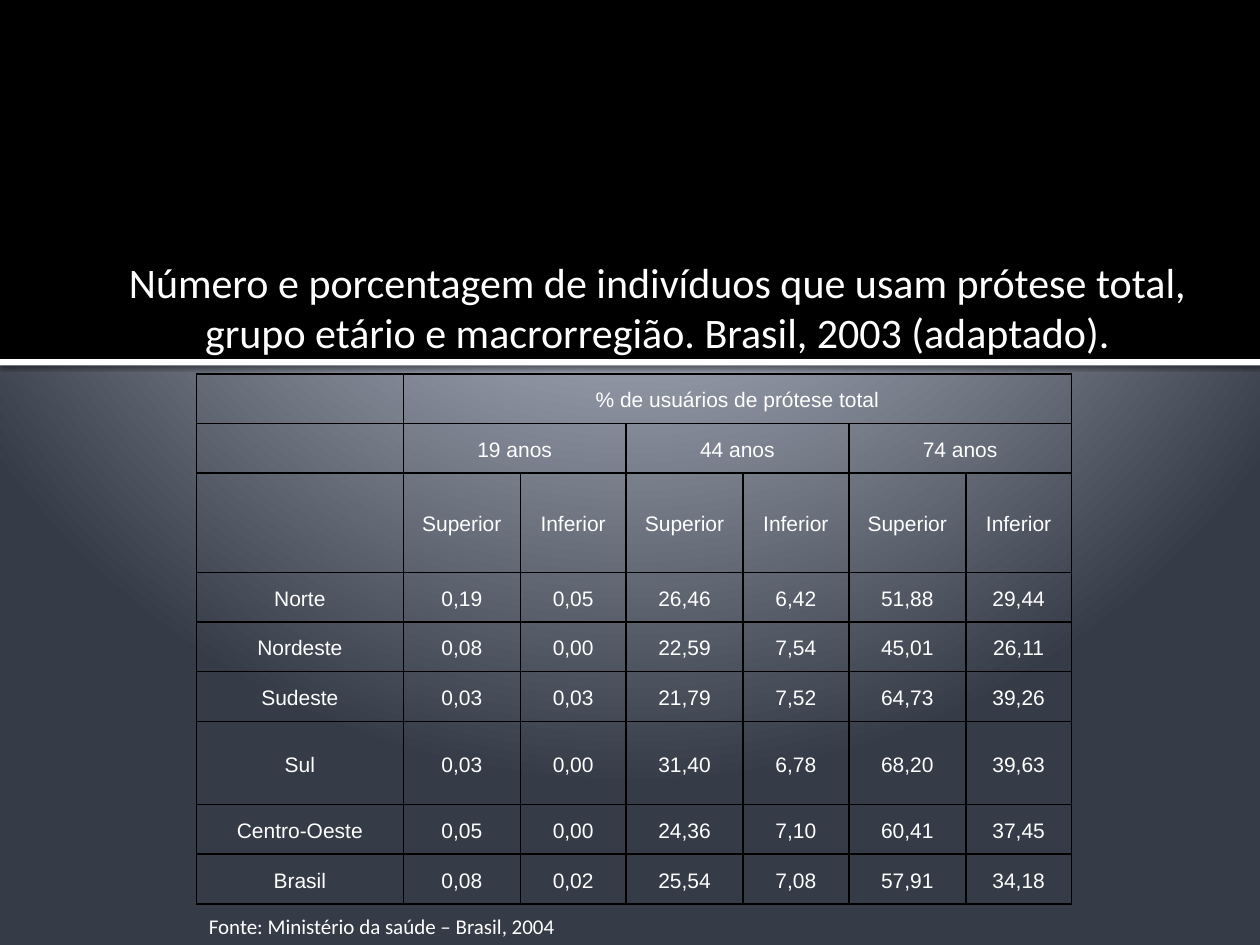
import dataclasses

import lxml.etree
import pptx
import pptx.dml.color
import pptx.enum.shapes
import pptx.enum.text
import pptx.oxml
import pptx.oxml.ns
import pptx.util

Cm = pptx.util.Cm
Pt = pptx.util.Pt
ALIGN = pptx.enum.text.PP_ALIGN
ANCHOR = pptx.enum.text.MSO_ANCHOR
NS = pptx.oxml.ns.nsdecls("a", "p")


@dataclasses.dataclass
class Theme:
    text: str = "FFFFFF"
    band: str = "000000"
    rule: str = "FFFFFF"
    border: str = "000000"
    backdrop: tuple = ((0, "C1C5D3"), (12, "C1C5D3"), (20, "BFC4D2"), (100, "353B47"))
    heading_font: str = "Calibri"
    table_font: str = "Arial"
    title_size: int = 24
    body_size: int = 12


def write(tf, text, *, font, size, color, align=ALIGN.LEFT, spacing=None):
    """Put one formatted run of text in a text frame."""
    p = tf.paragraphs[0]
    p.alignment = align
    if spacing:
        p.line_spacing = spacing
    r = p.add_run()
    r.text = text
    r.font.name = font
    r.font.size = Pt(size)
    r.font.bold = False
    r.font.color.rgb = pptx.dml.color.RGBColor.from_string(color)


class Builder:
    """Holds the theme and the current slide."""

    def __init__(self, slide, theme):
        self.slide = slide
        self.theme = theme

    def background(self):
        stops = "".join(
            f'<a:gs pos="{pos * 1000}"><a:srgbClr val="{color}"/></a:gs>'
            for pos, color in self.theme.backdrop)
        bg = pptx.oxml.parse_xml(
            f'<p:bg {NS}><p:bgPr><a:gradFill rotWithShape="1"><a:gsLst>{stops}</a:gsLst>'
            '<a:path path="circle"><a:fillToRect l="10000" t="-25000" r="10000" b="125000"/>'
            '</a:path></a:gradFill><a:effectLst/></p:bgPr></p:bg>')
        self.slide.element.cSld.insert(0, bg)

    def band(self, top, height, color, shadow=False):
        sp = self.slide.shapes.add_shape(
            pptx.enum.shapes.MSO_SHAPE.RECTANGLE, 0, Cm(top), Cm(25.4), Cm(height))
        sp.fill.solid()
        sp.fill.fore_color.rgb = pptx.dml.color.RGBColor.from_string(color)
        sp.line.fill.background()
        sp.shadow.inherit = False
        if shadow:
            effects = sp.element.spPr.find(pptx.oxml.ns.qn("a:effectLst"))
            effects.append(pptx.oxml.parse_xml(
                f'<a:outerShdw {NS} blurRad="{Pt(2.5)}" dist="{Pt(0.8)}" dir="5400000"'
                ' rotWithShape="0"><a:srgbClr val="000000"><a:alpha val="60000"/>'
                '</a:srgbClr></a:outerShdw>'))

    def title(self, text, left, top, width, height):
        sp = self.slide.shapes.title
        sp.left, sp.top, sp.width, sp.height = Cm(left), Cm(top), Cm(width), Cm(height)
        tf = sp.text_frame
        tf.auto_size = pptx.enum.text.MSO_AUTO_SIZE.NONE
        tf.word_wrap = True
        tf.vertical_anchor = ANCHOR.TOP
        tf.margin_left, tf.margin_right = Cm(0.4), Cm(0.13)
        tf.margin_top = tf.margin_bottom = 0
        write(tf, text, font=self.theme.heading_font, size=self.theme.title_size,
              color=self.theme.text, align=ALIGN.CENTER)
        # Bring the title in front of the bands
        self.slide.shapes.element.append(sp.element)

    def note(self, text, left, top, width, height):
        sp = self.slide.shapes.add_textbox(Cm(left), Cm(top), Cm(width), Cm(height))
        sp.text_frame.word_wrap = False
        write(sp.text_frame, text, font=self.theme.heading_font,
              size=self.theme.body_size, color=self.theme.text)

    def cell(self, cell, text):
        cell.margin_left = cell.margin_right = Cm(0.18)
        cell.margin_top = cell.margin_bottom = 0
        cell.vertical_anchor = ANCHOR.MIDDLE
        tcPr = cell._tc.get_or_add_tcPr()
        for side in ("lnL", "lnR", "lnT", "lnB"):
            tcPr.append(pptx.oxml.parse_xml(
                f'<a:{side} {NS} w="{Pt(1)}"><a:solidFill>'
                f'<a:srgbClr val="{self.theme.border}"/></a:solidFill></a:{side}>'))
        cell.fill.background()
        if text:
            write(cell.text_frame, text, font=self.theme.table_font,
                  size=self.theme.body_size, color=self.theme.text,
                  align=ALIGN.CENTER, spacing=1.15)

    def table(self, rows, left, top, widths, heights, merges):
        table = self.slide.shapes.add_table(
            len(rows), len(widths), Cm(left), Cm(top),
            Cm(sum(widths)), Cm(sum(heights))).table
        table.first_row = table.horz_banding = False
        for column, width in zip(table.columns, widths):
            column.width = Cm(width)
        for row, height in zip(table.rows, heights):
            row.height = Cm(height)
        for i, row in enumerate(rows):
            for j, text in enumerate(row):
                self.cell(table.cell(i, j), text)
        for row, first, last in merges:
            table.cell(row, first).merge(table.cell(row, last))


HEADER = [
    ["", "% de usuários de prótese total", "", "", "", "", ""],
    ["", "19 anos", "", "44 anos", "", "74 anos", ""],
    [""] + ["Superior", "Inferior"] * 3,
]
REGIONS = [
    ["Norte", "0,19", "0,05", "26,46", "6,42", "51,88", "29,44"],
    ["Nordeste", "0,08", "0,00", "22,59", "7,54", "45,01", "26,11"],
    ["Sudeste", "0,03", "0,03", "21,79", "7,52", "64,73", "39,26"],
    ["Sul", "0,03", "0,00", "31,40", "6,78", "68,20", "39,63"],
    ["Centro-Oeste", "0,05", "0,00", "24,36", "7,10", "60,41", "37,45"],
    ["Brasil", "0,08", "0,02", "25,54", "7,08", "57,91", "34,18"],
]


def main():
    prs = pptx.Presentation()
    prs.slide_width, prs.slide_height = Cm(25.4), Cm(19.05)
    theme = Theme()
    page = Builder(prs.slides.add_slide(prs.slide_layouts[5]), theme)

    # Backdrop, header band and rule
    page.background()
    page.band(0, 7.24, theme.band)
    page.band(7.24, 0.13, theme.rule, shadow=True)

    # Heading
    page.title("Número e porcentagem de indivíduos que usam prótese total, "
               "grupo etário e macrorregião. Brasil, 2003 (adaptado).",
               1.98, 5.17, 22.28, 1.9)

    # Denture use by region and age group
    page.table(HEADER + REGIONS, 3.96, 7.54,
               widths=[4.17] + [2.36, 2.13] * 3,
               heights=[1, 1, 2, 1, 1, 1, 1.68, 1, 1],
               merges=[(0, 1, 6)] + [(1, j, j + 1) for j in (1, 3, 5)])

    # Source
    page.note("Fonte: Ministério da saúde – Brasil, 2004", 3.96, 18.29, 7.59, 0.76)

    prs.save("out.pptx")


if __name__ == "__main__":
    main()
